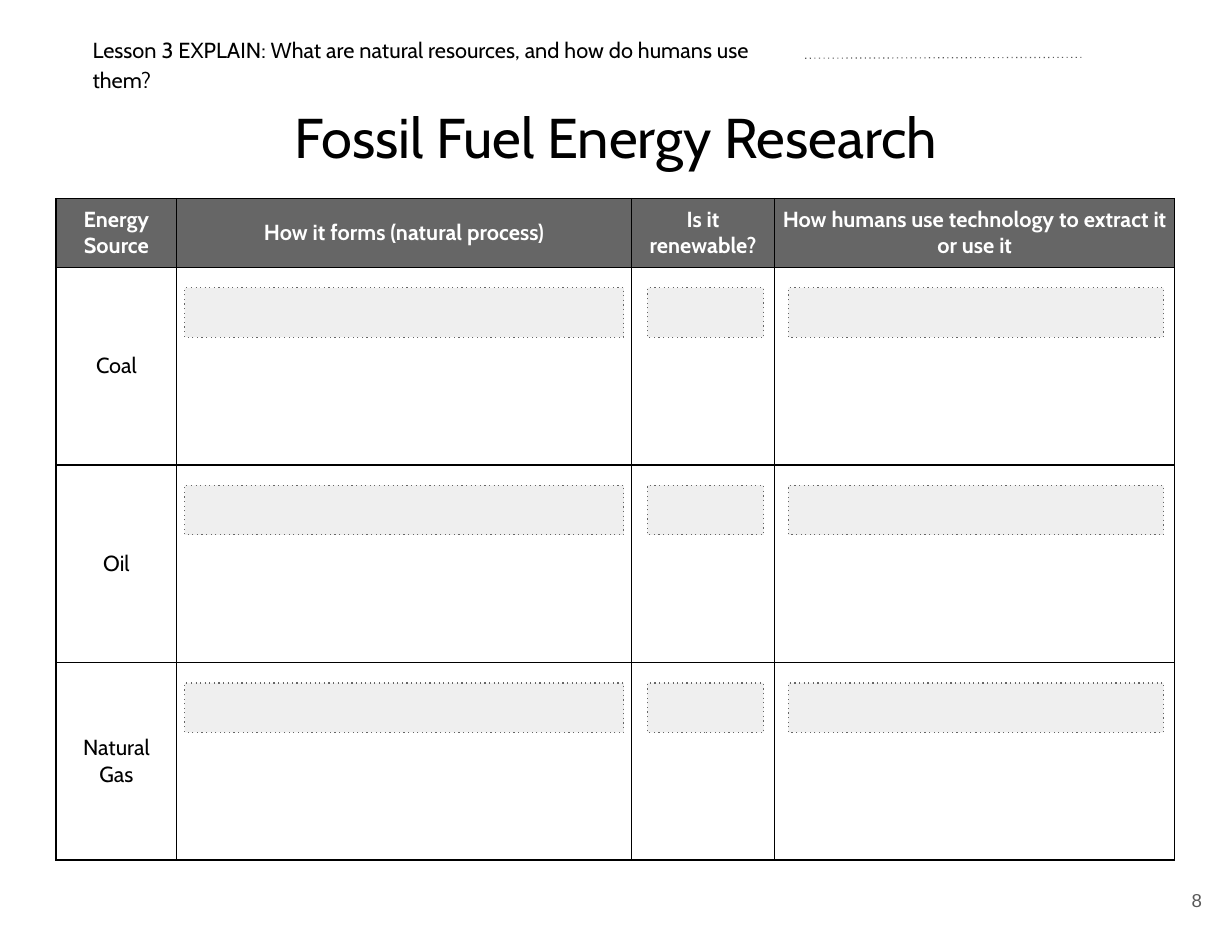
from lxml import etree
from pptx import Presentation
from pptx.dml.color import RGBColor
from pptx.enum.shapes import MSO_CONNECTOR, MSO_SHAPE
from pptx.enum.text import MSO_ANCHOR, MSO_AUTO_SIZE, PP_ALIGN
from pptx.oxml import parse_xml
from pptx.oxml.ns import nsdecls, qn
from pptx.util import Cm, Pt

CENTER, LEFT, RIGHT = PP_ALIGN.CENTER, PP_ALIGN.LEFT, PP_ALIGN.RIGHT
TOP, MIDDLE = MSO_ANCHOR.TOP, MSO_ANCHOR.MIDDLE
NO_AUTOFIT = MSO_AUTO_SIZE.NONE
RECTANGLE, STRAIGHT = MSO_SHAPE.RECTANGLE, MSO_CONNECTOR.STRAIGHT

BLACK, WHITE, GRAY = "000000", "FFFFFF", "666666"
PALE, DARK_GRAY = "EFEFEF", "595959"

HEADINGS = ["Energy Source", "How it forms (natural process)",
            "Is it renewable?", "How humans use technology to extract it or use it"]
SOURCES = ["Coal", "Oil", "Natural Gas"]
COLUMN_WIDTHS = [2.74, 10.31, 3.25, 9.07]
HEADER_HEIGHT, ROW_HEIGHT = 1.56, 4.48
ANSWER_COLUMNS = [(4.19, 9.96), (14.68, 2.64), (17.88, 8.51)]  # left, width
ANSWER_TOP, ANSWER_HEIGHT = 6.53, 1.12


def color(value):
    return RGBColor.from_string(value)


def write(paragraph, text, size, ink, align, font="Cabin", bold=False):
    paragraph.alignment = align
    run = paragraph.add_run()
    run.text = text
    run.font.name = font
    run.font.size = Pt(size)
    run.font.bold = bold
    run.font.color.rgb = color(ink)


def set_frame(frame, anchor, inset):
    frame.word_wrap = True
    frame.auto_size = NO_AUTOFIT
    frame.vertical_anchor = anchor
    frame.margin_left = frame.margin_right = Cm(inset)
    frame.margin_top = frame.margin_bottom = Cm(inset)
    return frame.paragraphs[0]


def space_lines(paragraph):
    paragraph.line_spacing = 1.15
    paragraph.space_before = Pt(0)
    paragraph.space_after = Pt(10)


def set_dotted_line(line, ink):
    line.color.rgb = color(ink)
    line.width = Pt(0.75)
    etree.SubElement(line._get_or_add_ln(), qn("a:prstDash"), val="dot")


def add_title(slide, text):
    title = slide.shapes.title
    title.left, title.top = Cm(0), Cm(1.85)
    title.width, title.height = Cm(27.94), Cm(1.65)
    heading = set_frame(title.text_frame, TOP, 0.25)
    space_lines(heading)
    write(heading, text, 36, BLACK, CENTER)


def add_text(slide, left, top, width, height, inset):
    box = slide.shapes.add_textbox(Cm(left), Cm(top), Cm(width), Cm(height))
    return set_frame(box.text_frame, MIDDLE, inset)


def add_name_line(slide):
    name_line = slide.shapes.add_connector(
        STRAIGHT, Cm(18.26), Cm(1.32), Cm(24.59), Cm(1.3))
    set_dotted_line(name_line.line, DARK_GRAY)
    etree.SubElement(name_line._element.spPr, qn("a:effectLst"))


def format_cell(cell, fill):
    cell.vertical_anchor = MIDDLE
    cell.margin_left = cell.margin_right = Cm(0.18)
    cell.margin_top = cell.margin_bottom = Cm(0.18)
    properties = cell._tc.get_or_add_tcPr()
    for side in ("lnL", "lnR", "lnT", "lnB"):
        properties.append(parse_xml(
            f'<a:{side} {nsdecls("a")} w="12700"><a:solidFill>'
            f'<a:srgbClr val="{BLACK}"/></a:solidFill></a:{side}>'))
    cell.fill.solid()
    cell.fill.fore_color.rgb = color(fill)


def add_research_table(slide):
    table = slide.shapes.add_table(
        len(SOURCES) + 1, len(HEADINGS), Cm(1.27), Cm(4.5),
        Cm(sum(COLUMN_WIDTHS)), Cm(HEADER_HEIGHT + len(SOURCES) * ROW_HEIGHT)).table
    table.first_row = table.horz_banding = False
    for column, width in zip(table.columns, COLUMN_WIDTHS):
        column.width = Cm(width)
    for index, row in enumerate(table.rows):
        row.height = Cm(ROW_HEIGHT if index else HEADER_HEIGHT)
        for cell in row.cells:
            format_cell(cell, WHITE if index else GRAY)
    for index, heading in enumerate(HEADINGS):
        write(table.cell(0, index).text_frame.paragraphs[0],
              heading, 14, WHITE, CENTER, bold=True)
    for index, source in enumerate(SOURCES, 1):
        write(table.cell(index, 0).text_frame.paragraphs[0],
              source, 14, BLACK, CENTER)


def add_answer_box(slide, left, top, width):
    answer = slide.shapes.add_shape(
        RECTANGLE, Cm(left), Cm(top), Cm(width), Cm(ANSWER_HEIGHT))
    answer.shadow.inherit = False
    answer.fill.solid()
    answer.fill.fore_color.rgb = color(PALE)
    set_dotted_line(answer.line, GRAY)


def main():
    prs = Presentation()
    prs.slide_width, prs.slide_height = Cm(27.94), Cm(21.59)
    slide = prs.slides.add_slide(prs.slide_layouts[5])

    # Heading area
    add_title(slide, "Fossil Fuel Energy Research")
    lesson = add_text(slide, 1.85, 0.71, 16.43, 1.42, 0.25)
    space_lines(lesson)
    write(lesson, "Lesson 3 EXPLAIN: What are natural resources, "
          "and how do humans use them?", 14, BLACK, LEFT)
    add_name_line(slide)

    # Research table with an answer box in each open cell
    add_research_table(slide)
    for row in range(len(SOURCES)):
        for left, width in ANSWER_COLUMNS:
            add_answer_box(slide, left, ANSWER_TOP + row * ROW_HEIGHT, width)

    # Page number
    page_number = add_text(slide, 25.88, 19.58, 1.68, 1.65, 0.3)
    write(page_number, "8", 12, DARK_GRAY, RIGHT, font="Arial")

    prs.save("out.pptx")


if __name__ == "__main__":
    main()
